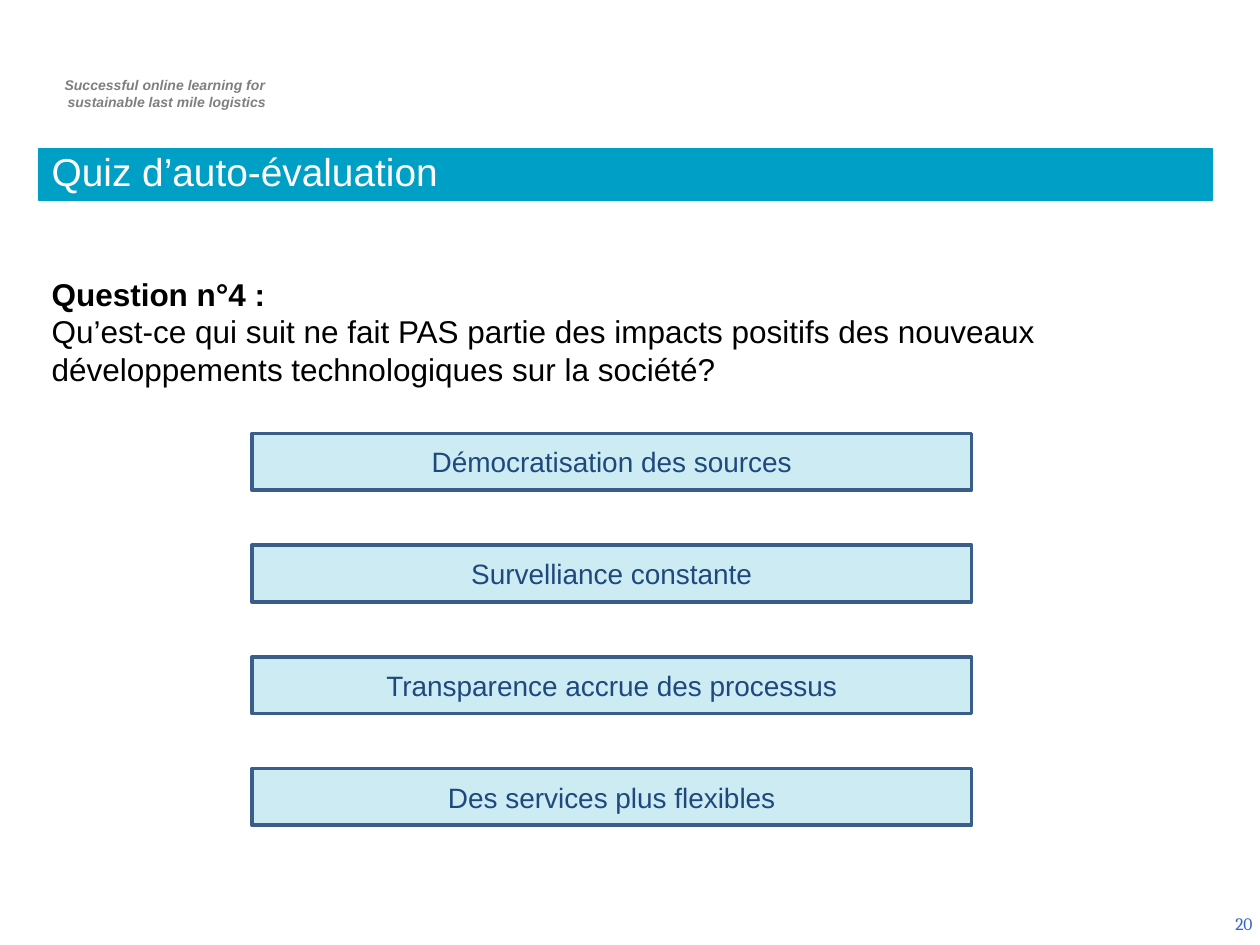
from lxml import etree
from pptx import Presentation
from pptx.dml.color import RGBColor
from pptx.enum import shapes, text
from pptx.oxml.ns import qn
from pptx.util import Inches, Pt

TEAL = RGBColor(0x00, 0x9F, 0xC6)
NAVY = RGBColor(0x1F, 0x49, 0x7D)
BORDER = RGBColor(0x39, 0x5E, 0x89)
GREY = RGBColor(0x7F, 0x7F, 0x7F)
BLUE = RGBColor(0x33, 0x66, 0xCC)
BLACK = RGBColor(0x00, 0x00, 0x00)
WHITE = RGBColor(0xFF, 0xFF, 0xFF)

ANSWERS = [
    "Démocratisation des sources",
    "Survelliance constante",
    "Transparence accrue des processus",
    "Des services plus flexibles",
]


def place(shape, box):
    shape.left, shape.top, shape.width, shape.height = (Inches(v) for v in box)


def prepare(shape, anchor):
    frame = shape.text_frame
    frame.word_wrap = True
    frame.auto_size = text.MSO_AUTO_SIZE.NONE
    frame.vertical_anchor = anchor
    return frame


def write(paragraph, words, size, color, align, font="Arial", bold=False, italic=False):
    paragraph.alignment = align
    run = paragraph.add_run()
    run.text = words
    run.font.name = font
    run.font.size = Pt(size)
    run.font.bold = bold
    run.font.italic = italic
    run.font.color.rgb = color


def add_tagline(slide, box):
    tagline = slide.shapes.add_textbox(*(Inches(v) for v in box))
    frame = prepare(tagline, text.MSO_ANCHOR.TOP)
    lines = ["Successful online learning for ", "sustainable last mile logistics"]
    for i, line in enumerate(lines):
        paragraph = frame.add_paragraph() if i else frame.paragraphs[0]
        paragraph._p.get_or_add_pPr().set("marL", str(Inches(0.04)))
        write(paragraph, line, 8, GREY, text.PP_ALIGN.CENTER, bold=True, italic=True)


def add_title(slide, box):
    title = slide.shapes.title
    place(title, box)
    title.fill.solid()
    title.fill.fore_color.rgb = TEAL
    title.line.color.rgb = TEAL
    title.line.width = Pt(0.75)
    heading = prepare(title, text.MSO_ANCHOR.BOTTOM).paragraphs[0]
    heading.line_spacing = 0.8
    write(heading, "Quiz d’auto-évaluation", 22.2, WHITE, text.PP_ALIGN.LEFT)


def add_question(slide, box):
    question = slide.placeholders[1]
    place(question, box)
    frame = prepare(question, text.MSO_ANCHOR.TOP)
    lines = [
        ("Question n°4 :", True),
        ("Qu’est-ce qui suit ne fait PAS partie des impacts positifs des nouveaux "
         "développements technologiques sur la société?", False),
    ]
    for i, (line, bold) in enumerate(lines):
        paragraph = frame.add_paragraph() if i else frame.paragraphs[0]
        properties = paragraph._p.get_or_add_pPr()
        properties.set("marL", "0")
        properties.set("indent", "0")
        etree.SubElement(properties, qn("a:buNone"))
        paragraph.space_before = Pt(0)
        write(paragraph, line, 18, BLACK, text.PP_ALIGN.LEFT, bold=bold)


def add_answers(slide, box):
    left, top, width, height = box
    button_height = 0.45
    step = (height - button_height) / (len(ANSWERS) - 1)
    for i, answer in enumerate(ANSWERS):
        button = slide.shapes.add_shape(
            shapes.MSO_SHAPE.RECTANGLE, Inches(left), Inches(top + i * step),
            Inches(width), Inches(button_height))
        button.shadow.inherit = False
        button.fill.solid()
        button.fill.fore_color.rgb = TEAL
        # 20 % opacity
        tint = button._element.spPr.find(qn("a:solidFill"))[0]
        etree.SubElement(tint, qn("a:alpha")).set("val", "20000")
        button.line.color.rgb = BORDER
        button.line.width = Pt(2)
        frame = prepare(button, text.MSO_ANCHOR.MIDDLE)
        write(frame.paragraphs[0], answer, 16, NAVY, text.PP_ALIGN.CENTER)


def add_page_number(slide, box):
    number = slide.shapes.add_textbox(*(Inches(v) for v in box))
    frame = prepare(number, text.MSO_ANCHOR.MIDDLE)
    write(frame.paragraphs[0], "20", 10, BLUE, text.PP_ALIGN.RIGHT, font="Cambria")


def main():
    deck = Presentation()
    deck.slide_width, deck.slide_height = Inches(10), Inches(7.5)
    slide = deck.slides.add_slide(deck.slide_layouts[1])

    # Header
    add_tagline(slide, (0.29, 0.56, 2.03, 0.37))
    add_title(slide, (0.31, 1.18, 9.31, 0.41))
    # Quiz
    add_question(slide, (0.31, 2.13, 9.31, 1.31))
    add_answers(slide, (2, 3.44, 5.71, 3.11))
    # Footer
    add_page_number(slide, (7.71, 7.13, 2.33, 0.4))

    deck.save("out.pptx")


if __name__ == "__main__":
    main()
